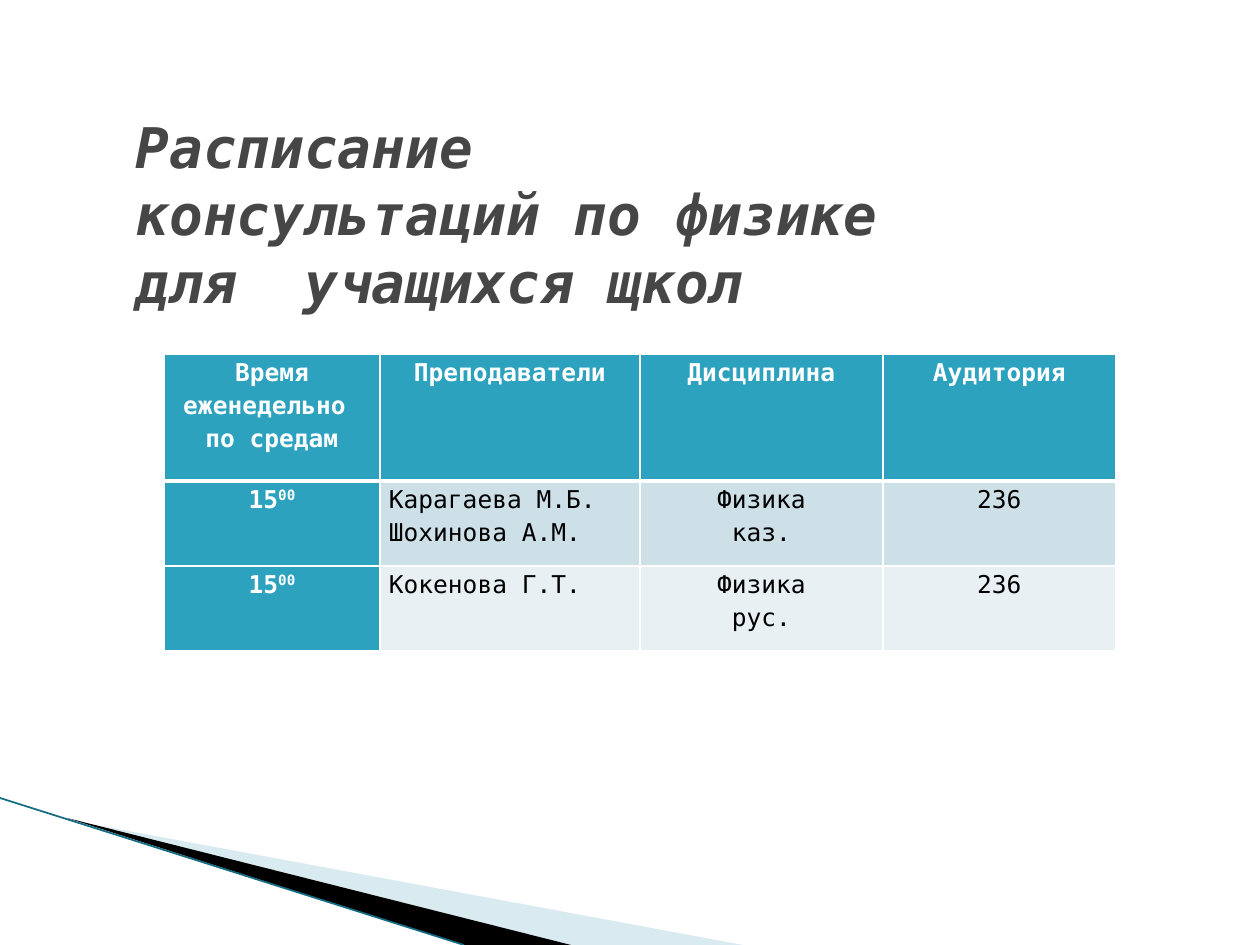
from dataclasses import dataclass

from lxml import etree
from pptx import Presentation
from pptx import util as u
from pptx.dml.color import RGBColor
from pptx.enum import shapes, text
from pptx.oxml import ns

SCALE = 914400 / 126


def px(length):
    return u.Emu(round(length * SCALE))


@dataclass(frozen=True)
class Theme:
    font: str = "DejaVu Sans Mono"
    title_size: int = 32
    cell_size: int = 14
    title: str = "464646"
    white: str = "FFFFFF"
    black: str = "000000"
    accent: str = "2DA2BF"
    bands: tuple = ("CDE0E8", "E8F0F4")
    swoosh: str = "A0CBDC"
    edge: str = "146C82"


class SlideBuilder:
    def __init__(self, slide, theme):
        self.slide = slide
        self.theme = theme

    def style(self, font, size, color, bold=False, italic=False):
        font.name = self.theme.font
        font.size = u.Pt(size)
        font.bold = bold
        font.italic = italic
        font.color.rgb = RGBColor.from_string(color)

    def title(self, wording, left, top, width, height):
        heading = self.slide.shapes.title
        heading.left, heading.top = px(left), px(top)
        heading.width, heading.height = px(width), px(height)
        frame = heading.text_frame
        frame.text = wording
        frame.word_wrap = True
        frame.auto_size = text.MSO_AUTO_SIZE.NONE
        frame.vertical_anchor = text.MSO_ANCHOR.MIDDLE
        paragraph = frame.paragraphs[0]
        paragraph.alignment = text.PP_ALIGN.LEFT
        paragraph.line_spacing = 1
        self.style(paragraph.font, self.theme.title_size, self.theme.title, True, True)

    def wedge(self, points, color, opacity=100):
        outline = self.slide.shapes.build_freeform(*points[0], scale=SCALE)
        outline.add_line_segments(points[1:], close=True)
        wedge = outline.convert_to_shape()
        wedge.shadow.inherit = False
        wedge.line.fill.background()
        wedge.fill.solid()
        wedge.fill.fore_color.rgb = RGBColor.from_string(color)
        if opacity < 100:
            tint = wedge.fill._xPr.find(".//" + ns.qn("a:srgbClr"))
            etree.SubElement(tint, ns.qn("a:alpha")).set("val", str(opacity * 1000))

    def line(self, start, end, color, width):
        edge = self.slide.shapes.add_connector(
            shapes.MSO_CONNECTOR.STRAIGHT, *map(px, start + end))
        edge.line.color.rgb = RGBColor.from_string(color)
        edge.line.width = u.Pt(width)
        etree.SubElement(edge._element.spPr, ns.qn("a:effectLst"))

    def borders(self, cell, bottom, top):
        props = cell._tc.get_or_add_tcPr()
        for side, width in (("L", 1), ("R", 1), ("T", top), ("B", bottom)):
            border = etree.SubElement(props, ns.qn(f"a:ln{side}"), w=str(u.Pt(width)))
            fill = etree.SubElement(border, ns.qn("a:solidFill"))
            etree.SubElement(fill, ns.qn("a:srgbClr"), val=self.theme.white)

    def cell(self, cell, wording, row, column):
        theme = self.theme
        strong = row == 0 or column == 0
        self.borders(cell, bottom=3 if row == 0 else 1, top=3 if row == 1 else 1)
        cell.fill.solid()
        cell.fill.fore_color.rgb = RGBColor.from_string(
            theme.accent if strong else theme.bands[row - 1])
        cell.margin_left = cell.margin_right = px(9)
        cell.margin_top = cell.margin_bottom = 0
        frame = cell.text_frame
        frame.text = wording
        for paragraph in frame.paragraphs:
            base, _, raised = paragraph.text.partition("^")
            if raised:
                paragraph.runs[0].text = base
                minutes = paragraph.add_run()
                minutes.text = raised
                minutes._r.get_or_add_rPr().set("baseline", "30000")
            names = row > 0 and column == 1
            paragraph.alignment = text.PP_ALIGN.LEFT if names else text.PP_ALIGN.CENTER
            paragraph.line_spacing = 1.15
            self.style(paragraph.font, theme.cell_size,
                       theme.white if strong else theme.black, strong)

    def table(self, rows, left, top, widths, heights):
        schedule = self.slide.shapes.add_table(
            len(heights), len(widths), px(left), px(top),
            px(sum(widths)), px(sum(heights))).table
        schedule.first_col = True
        for column, width in zip(schedule.columns, widths):
            column.width = px(width)
        for line, height in zip(schedule.rows, heights):
            line.height = px(height)
        for r, row in enumerate(rows):
            for c, wording in enumerate(row):
                self.cell(schedule.cell(r, c), wording, r, c)


def main():
    deck = Presentation()
    deck.slide_width, deck.slide_height = px(1260), px(945)
    theme = Theme()
    page = SlideBuilder(deck.slides.add_slide(deck.slide_layouts[5]), theme)

    page.wedge([(69, 820), (743, 945), (570, 945)], theme.swoosh, opacity=40)
    page.wedge([(67, 818), (571, 945), (464, 945)], theme.black)
    page.line((0, 798), (464, 945), theme.edge, 1)

    page.title("Расписание\vконсультаций по физике\vдля  учащихся щкол",
               123, 135, 1032, 157)

    page.table(
        [("Время\nеженедельно  по средам", "Преподаватели", "Дисциплина", "Аудитория"),
         ("15^00", "Карагаева М.Б.\nШохинова А.М.", "Физика\nказ.", "236"),
         ("15^00", "Кокенова Г.Т.", "Физика\nрус.", "236")],
        164, 354, widths=(216, 260, 243, 233), heights=(127, 85, 85))

    deck.save("out.pptx")


if __name__ == "__main__":
    main()
